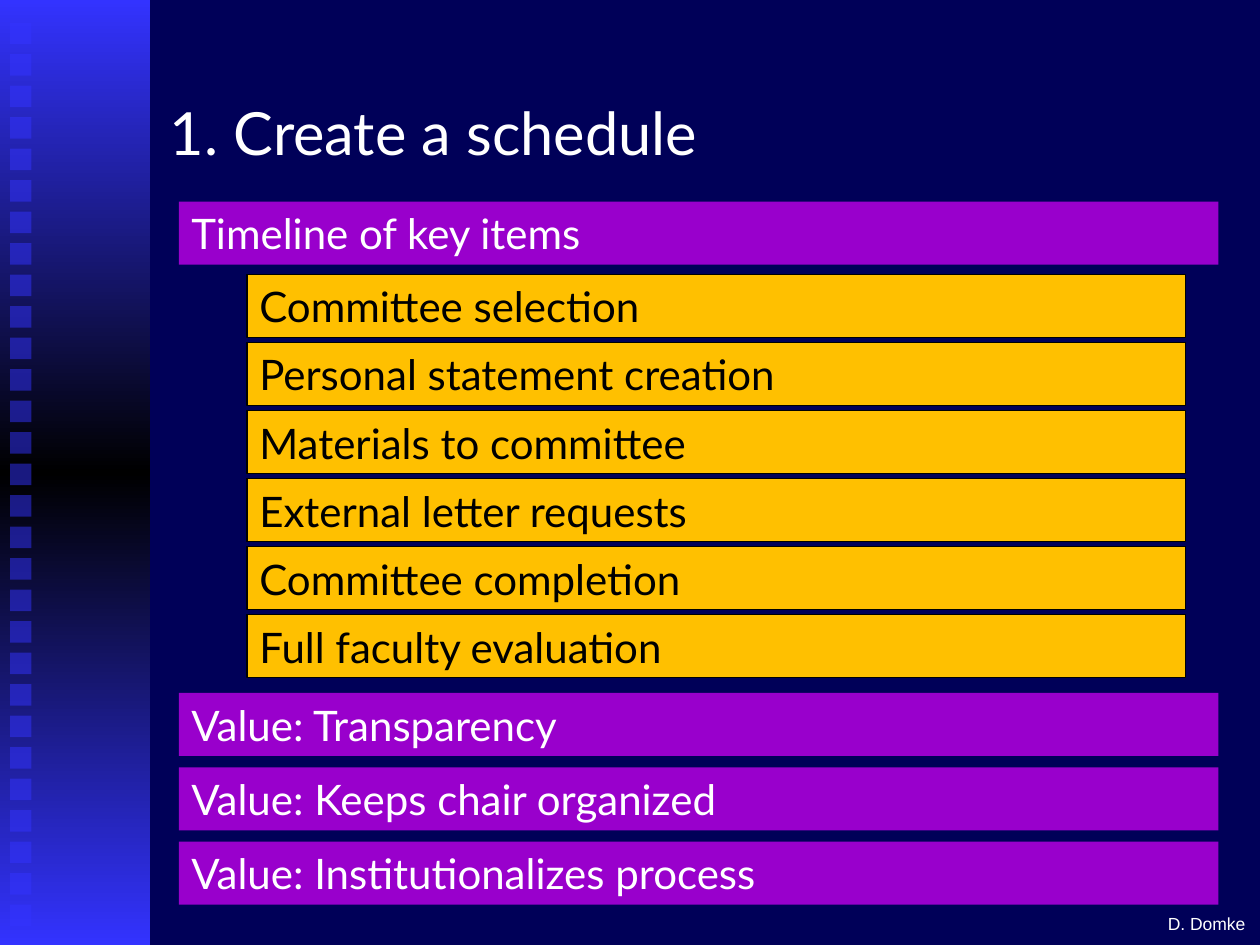
from lxml.etree import SubElement
from pptx import Presentation
from pptx.dml.color import RGBColor
from pptx.enum.shapes import MSO_SHAPE as Shape
from pptx.enum.text import MSO_ANCHOR as Anchor, PP_ALIGN as Align
from pptx.oxml import parse_xml
from pptx.oxml.ns import nsdecls, qn
from pptx.util import Inches, Pt

# Content
TITLE = "1. Create a schedule"
HEADING = "Timeline of key items"
STEPS = [
    "Committee selection",
    "Personal statement creation",
    "Materials to committee",
    "External letter requests",
    "Committee completion",
    "Full faculty evaluation",
]
VALUES = [
    "Value: Transparency",
    "Value: Keeps chair organized",
    "Value: Institutionalizes process",
]
AUTHOR = "D. Domke"

# Colours
NAVY = RGBColor(0x00, 0x00, 0x58)
BLUE = RGBColor(0x33, 0x33, 0xFF)
PURPLE = RGBColor(0x99, 0x00, 0xCC)
GOLD = RGBColor(0xFF, 0xC0, 0x00)
WHITE = RGBColor(0xFF, 0xFF, 0xFF)
BLACK = RGBColor(0x00, 0x00, 0x00)

# Grid, in inches
WIDTH, HEIGHT = 10, 7.5
SIDEBAR_WIDTH = 1.19
SQUARE_LEFT, SQUARE_TOP, SQUARE_SIZE, SQUARE_PITCH = 0.08, 0.18, 0.17, 0.25
SQUARE_COUNT = 29
BAR_LEFT, BAR_WIDTH, BAR_HEIGHT = 1.42, 8.25, 0.5
STEP_LEFT, STEP_WIDTH = 1.96, 7.45
HEADING_TOP = 1.6
STEP_TOP, STEP_PITCH = 2.18, 0.54
VALUE_TOP, VALUE_PITCH = 5.5, 0.59

prs = Presentation()
prs.slide_width, prs.slide_height = Inches(WIDTH), Inches(HEIGHT)
slide = prs.slides.add_slide(prs.slide_layouts[6])
slide.background.fill.solid()
slide.background.fill.fore_color.rgb = NAVY


def add_box(left, top, width, height, color, outline=None):
    box = slide.shapes.add_shape(
        Shape.RECTANGLE, Inches(left), Inches(top), Inches(width), Inches(height))
    box.shadow.inherit = False
    box.fill.solid()
    box.fill.fore_color.rgb = color
    if outline is None:
        box.line.fill.background()
    else:
        box.line.color.rgb = outline
        box.line.width = Pt(0.75)
    return box


def write(shape, text, size, color, font="Lato", anchor=Anchor.MIDDLE):
    frame = shape.text_frame
    frame.word_wrap = True
    frame.vertical_anchor = anchor
    frame.text = text
    paragraph = frame.paragraphs[0]
    paragraph.alignment = Align.LEFT
    paragraph.font.name = font
    paragraph.font.size = Pt(size)
    paragraph.font.color.rgb = color


def add_label(text, left, top, width, height, size, font="Lato", anchor=Anchor.MIDDLE):
    label = slide.shapes.add_textbox(
        Inches(left), Inches(top), Inches(width), Inches(height))
    write(label, text, size, WHITE, font, anchor)


def add_bar(text, top):
    write(add_box(BAR_LEFT, top, BAR_WIDTH, BAR_HEIGHT, PURPLE), text, 24, WHITE)


# Sidebar, fading from blue to black and back
sidebar = add_box(0, 0, SIDEBAR_WIDTH, HEIGHT, BLUE)
stops = "".join(
    f'<a:gs pos="{share * 1000}"><a:srgbClr val="{color}"/></a:gs>'
    for share, color in [(0, BLUE), (50, BLACK), (100, BLUE)])
solid = sidebar.fill._xPr.find(qn("a:solidFill"))
solid.getparent().replace(solid, parse_xml(
    f'<a:gradFill {nsdecls("a")}><a:gsLst>{stops}</a:gsLst>'
    '<a:lin ang="5400000" scaled="0"/></a:gradFill>'))

# Column of half-transparent squares
for row in range(SQUARE_COUNT):
    square = add_box(SQUARE_LEFT, SQUARE_TOP + row * SQUARE_PITCH,
                     SQUARE_SIZE, SQUARE_SIZE, BLUE)
    square_color = square.fill._xPr.find(qn("a:solidFill"))[0]
    SubElement(square_color, qn("a:alpha")).set("val", "50000")

# Title and timeline
add_label(TITLE, 1.25, 0.42, 8.75, 1.25, 34)
add_bar(HEADING, HEADING_TOP)
for row, step in enumerate(STEPS):
    step_box = add_box(STEP_LEFT, STEP_TOP + row * STEP_PITCH,
                       STEP_WIDTH, BAR_HEIGHT, GOLD, BLACK)
    write(step_box, step, 24, BLACK)

# Values and author
for row, value in enumerate(VALUES):
    add_bar(value, VALUE_TOP + row * VALUE_PITCH)
add_label(AUTHOR, 9.17, 7.2, 0.83, 0.27, 10, "Arial", Anchor.TOP)

prs.save("out.pptx")
